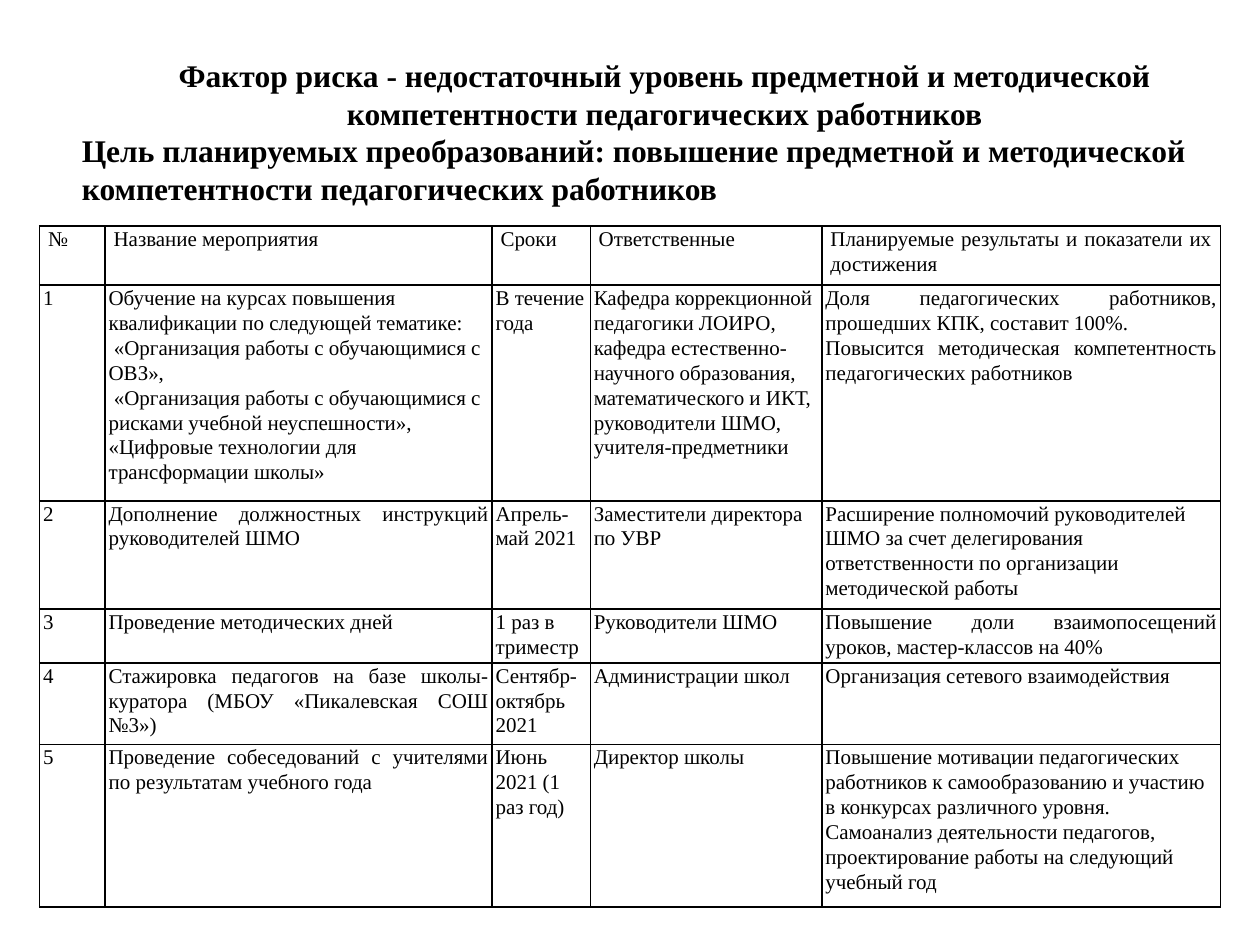
from lxml import etree
from pptx import Presentation, util as u
from pptx.dml.color import RGBColor
from pptx.enum import text as t
from pptx.oxml import ns

LEFT, CENTER, JUSTIFY = t.PP_ALIGN.LEFT, t.PP_ALIGN.CENTER, t.PP_ALIGN.JUSTIFY


def color(value):
    return RGBColor.from_string(value)


def write(frame, content, *, size, font, ink, bold=False, align=(LEFT,), spacing=None):
    """Write each line of content as a paragraph; the last alignment carries on."""
    frame.word_wrap = True
    for i, line in enumerate(content.split("\n")):
        paragraph = frame.paragraphs[0] if i == 0 else frame.add_paragraph()
        paragraph.alignment = align[min(i, len(align) - 1)]
        if spacing:
            paragraph.line_spacing = spacing
        run = paragraph.add_run()
        run.text = line
        run.font.size, run.font.name, run.font.bold = u.Pt(size), font, bold
        run.font.color.rgb = color(ink)


class PlanSlide:
    font, ink, paper = "Times New Roman", "000000", "FFFFFF"

    def __init__(self, deck):
        self.slide = deck.slides.add_slide(deck.slide_layouts[6])

    def heading(self, content, box, **style):
        frame = self.slide.shapes.add_textbox(*map(u.Cm, box)).text_frame
        write(frame, content, font=self.font, ink=self.ink, **style)

    def table(self, rows, left, top, widths, heights):
        frame = self.slide.shapes.add_table(
            len(rows), len(widths), u.Cm(left), u.Cm(top),
            u.Cm(sum(widths)), u.Cm(sum(heights)))
        grid = frame.table
        grid.first_row = grid.horz_banding = False
        for column, width in zip(grid.columns, widths):
            column.width = u.Cm(width)
        for row, height in zip(grid.rows, heights):
            row.height = u.Cm(height)
        for r, row in enumerate(rows):
            for c, content in enumerate(row):
                justified = r == 0 or c == 0 or (r, c) in JUSTIFIED
                self.cell(grid.cell(r, c), content,
                          inset=0.17 if r == 0 else 0.07,
                          align=JUSTIFY if justified else LEFT)

    def cell(self, cell, content, inset, align):
        cell.margin_left = cell.margin_right = u.Cm(inset)
        cell.margin_top = cell.margin_bottom = 0
        write(cell.text_frame, content, size=12, font=self.font, ink=self.ink,
              align=(align,), spacing=1.07)
        # Borders come before the fill in the cell properties
        properties = cell._tc.get_or_add_tcPr()
        for side in ("lnL", "lnR", "lnT", "lnB"):
            line = etree.SubElement(properties, ns.qn(f"a:{side}"), w=str(u.Pt(1)))
            fill = etree.SubElement(line, ns.qn("a:solidFill"))
            etree.SubElement(fill, ns.qn("a:srgbClr"), val=self.ink)
        cell.fill.solid()
        cell.fill.fore_color.rgb = color(self.paper)


HEADING = """Фактор риска - недостаточный уровень предметной и методической компетентности педагогических работников
Цель планируемых преобразований: повышение предметной и методической
компетентности педагогических работников"""

ACTIONS = [
    ("№", "Название мероприятия", "Сроки", "Ответственные",
     "Планируемые результаты и показатели их достижения"),
    ("1",
     "Обучение на курсах повышения квалификации по следующей тематике:\n"
     " «Организация работы с обучающимися с ОВЗ»,\n"
     " «Организация работы с обучающимися с рисками учебной неуспешности»,\n"
     "«Цифровые технологии для трансформации школы»",
     "В течение года",
     "Кафедра коррекционной педагогики ЛОИРО, кафедра естественно-научного "
     "образования, математического и ИКТ,\n"
     "руководители ШМО, учителя-предметники",
     "Доля педагогических работников, прошедших КПК, составит 100%.\n"
     "Повысится методическая компетентность педагогических работников"),
    ("2", "Дополнение должностных инструкций руководителей ШМО",
     "Апрель-май 2021", "Заместители директора по УВР",
     "Расширение полномочий руководителей ШМО за счет делегирования "
     "ответственности по организации методической работы"),
    ("3", "Проведение методических дней", "1 раз в триместр", "Руководители ШМО",
     "Повышение доли взаимопосещений уроков, мастер-классов на 40%"),
    ("4", "Стажировка педагогов на базе школы-куратора (МБОУ «Пикалевская СОШ №3»)",
     "Сентябр- октябрь 2021", "Администрации школ",
     "Организация сетевого взаимодействия"),
    ("5", "Проведение собеседований с учителями по результатам учебного года",
     "Июнь 2021 (1 раз год)", "Директор школы",
     "Повышение мотивации педагогических работников к самообразованию и участию "
     "в конкурсах различного уровня.  Самоанализ деятельности педагогов, "
     "проектирование работы на следующий  учебный год"),
]
# Body cells (row, column) set justified besides the number column
JUSTIFIED = {(1, 4), (2, 1), (3, 1), (3, 4), (4, 1), (4, 4), (5, 1)}


def main():
    deck = Presentation()
    deck.slide_width, deck.slide_height = u.Cm(25.4), u.Cm(19.05)
    plan = PlanSlide(deck)

    # Risk factor and goal
    plan.heading(HEADING, (1.4, 1, 24, 4.11), size=18, bold=True, align=(CENTER, LEFT))

    # Action plan
    plan.table(ACTIONS, left=0.8, top=4.56,
               widths=(1.32, 7.8, 1.98, 4.67, 8.03),
               heights=(1.19, 4.33, 2.18, 1.07, 1.65, 3.27))

    deck.save("out.pptx")


if __name__ == "__main__":
    main()
